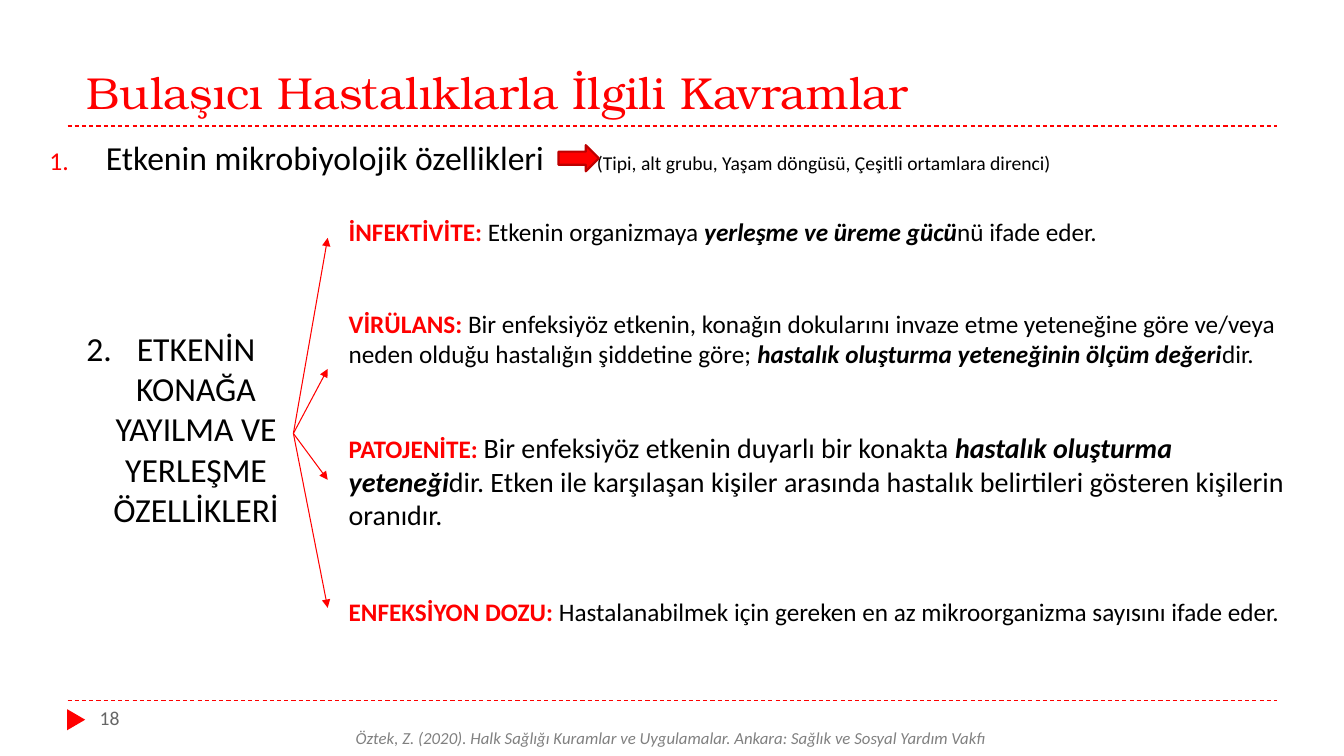
from dataclasses import dataclass

from lxml import etree
from pptx import Presentation
from pptx.dml.color import RGBColor
from pptx.enum.dml import MSO_LINE
from pptx.enum.shapes import MSO_CONNECTOR, MSO_SHAPE
from pptx.enum.text import MSO_ANCHOR, MSO_AUTO_SIZE, PP_ALIGN
from pptx.oxml.ns import qn
from pptx.shapes.autoshape import Shape
from pptx.shapes.connector import Connector
from pptx.slide import Slide
from pptx.text.text import _Paragraph
from pptx.util import Inches, Pt

LEFT, CENTER, JUSTIFY = PP_ALIGN.LEFT, PP_ALIGN.CENTER, PP_ALIGN.JUSTIFY
TOP, BOTTOM = MSO_ANCHOR.TOP, MSO_ANCHOR.BOTTOM
NO_FIT = MSO_AUTO_SIZE.NONE
STRAIGHT = MSO_CONNECTOR.STRAIGHT
ARROW, WEDGE = MSO_SHAPE.RIGHT_ARROW, MSO_SHAPE.ISOSCELES_TRIANGLE
DASH = MSO_LINE.DASH


@dataclass(frozen=True)
class Theme:
    red: str = "FF0000"
    edge: str = "BD0000"
    ink: str = "000000"
    gray: str = "808080"
    dim: str = "666666"
    head: str = "TeX Gyre Bonum"
    font: str = "Calibri"
    title: int = 32
    large: int = 24
    mid: int = 20
    base: int = 18
    small: int = 14
    note: int = 12


THEME = Theme()


@dataclass(frozen=True)
class Box:
    left: float
    top: float
    width: float
    height: float


@dataclass(frozen=True)
class Run:
    text: str
    size: int = THEME.base
    color: str = THEME.ink
    bold: bool = False
    italic: bool = False
    font: str = THEME.font


@dataclass(frozen=True)
class Term:
    name: str
    words: tuple[str, ...]
    gap: int
    tip: float
    size: int = THEME.base


TERMS = (
    Term("İNFEKTİVİTE: ",
         ("Etkenin organizmaya ", "yerleşme ve üreme gücü", "nü ifade eder."),
         0, 2.36),
    Term("VİRÜLANS: ",
         ("Bir enfeksiyöz etkenin, konağın dokularını invaze etme yeteneğine göre "
          "ve/veya neden olduğu hastalığın şiddetine göre; ",
          "hastalık oluşturma yeteneğinin ölçüm değeri", "dir."),
         44, 3.66),
    Term("PATOJENİTE: ",
         ("Bir enfeksiyöz etkenin duyarlı bir konakta ",
          "hastalık oluşturma yeteneği",
          "dir. Etken ile karşılaşan kişiler arasında hastalık belirtileri "
          "gösteren kişilerin oranıdır."),
         44, 4.76, THEME.mid),
    Term("ENFEKSİYON DOZU: ",
         ("Hastalanabilmek için gereken en az mikroorganizma sayısını ifade eder.",),
         46, 6.03),
)


def put(item: object, values: dict[str, object]) -> None:
    for name, value in values.items():
        setattr(item, name, value)


def place(shape: Shape, box: Box, anchor: MSO_ANCHOR = TOP) -> Shape:
    put(shape, {"left": Inches(box.left), "top": Inches(box.top),
                "width": Inches(box.width), "height": Inches(box.height)})
    put(shape.text_frame, {"word_wrap": True, "auto_size": NO_FIT,
                           "vertical_anchor": anchor})
    return shape


def write(para: _Paragraph, runs: list[Run], align: PP_ALIGN = LEFT,
          gap: int = 0) -> None:
    put(para, {"alignment": align, "space_before": Pt(gap)})
    for item in runs:
        run = para.add_run()
        run.text = item.text
        put(run.font, {"name": item.font, "size": Pt(item.size),
                       "bold": item.bold, "italic": item.italic})
        run.font.color.rgb = RGBColor.from_string(item.color)


def text(slide: Slide, box: Box, run: Run, align: PP_ALIGN = LEFT) -> Shape:
    shape = place(slide.shapes.add_textbox(0, 0, 0, 0), box)
    write(shape.text_frame.paragraphs[0], [run], align)
    return shape


def number(para: _Paragraph, start: int, indent: float, color: str,
           scale: int, tab: float = 0) -> None:
    props = para._p.get_or_add_pPr()
    props.set("marL", str(Inches(indent)))
    props.set("indent", str(-Inches(indent)))
    tint = etree.SubElement(props, qn("a:buClr"))
    etree.SubElement(tint, qn("a:srgbClr"), val=color)
    etree.SubElement(props, qn("a:buSzPct"), val=str(scale * 1000))
    etree.SubElement(props, qn("a:buFont"), typeface=THEME.font)
    etree.SubElement(props, qn("a:buAutoNum"), type="arabicPeriod",
                     startAt=str(start))
    if tab:
        stops = etree.SubElement(props, qn("a:tabLst"))
        etree.SubElement(stops, qn("a:tab"), pos=str(Inches(tab)), algn="l")


def link(slide: Slide, start: tuple[float, float],
         end: tuple[float, float]) -> Connector:
    line = slide.shapes.add_connector(
        STRAIGHT, *(Inches(v) for v in (*start, *end)))
    line.line.color.rgb = RGBColor.from_string(THEME.red)
    line.line.width = Pt(0.75)
    etree.SubElement(line._element.spPr, qn("a:effectLst"))
    return line


def solid(slide: Slide, kind: MSO_SHAPE, box: Box) -> Shape:
    shape = place(slide.shapes.add_shape(kind, 0, 0, 0, 0), box)
    shape.shadow.inherit = False
    shape.fill.solid()
    shape.fill.fore_color.rgb = RGBColor.from_string(THEME.red)
    shape.line.fill.background()
    return shape


def main() -> None:
    deck = Presentation()
    put(deck, {"slide_width": Inches(13.33), "slide_height": Inches(7.5)})
    slide = deck.slides.add_slide(deck.slide_layouts[1])

    for y in (6.95, 1.25):
        link(slide, (0.67, y), (12.67, y)).line.dash_style = DASH
    solid(slide, WEDGE, Box(0.65, 7.05, 0.21, 0.18)).rotation = 90

    title = place(slide.shapes.title, Box(0.76, 0, 11.33, 1.23), BOTTOM)
    write(title.text_frame.paragraphs[0],
          [Run("Bulaşıcı Hastalıklarla İlgili Kavramlar", THEME.title,
               THEME.red, font=THEME.head)])

    body = place(slide.placeholders[1], Box(0.39, 1.31, 12.33, 0.98))
    first = body.text_frame.paragraphs[0]
    write(first, [Run("Etkenin mikrobiyolojik özellikleri\t", THEME.large),
                  Run("(Tipi, alt grubu, Yaşam döngüsü, Çeşitli ortamlara direnci)",
                      THEME.small)], JUSTIFY, 6)
    number(first, 1, 0.56, THEME.red, 76, 5.43)

    text(slide, Box(3.43, 7.17, 6.47, 0.31),
         Run("Öztek, Z. (2020). Halk Sağlığı Kuramlar ve Uygulamalar. "
             "Ankara: Sağlık ve Sosyal Yardım Vakfı",
             THEME.note, THEME.gray, italic=True))

    terms = place(slide.shapes.add_textbox(0, 0, 0, 0), Box(3.36, 1.8, 9.53, 5.08))
    frame = terms.text_frame
    frame.margin_top = Inches(0.35)
    for i, term in enumerate(TERMS):
        para = frame.add_paragraph() if i else frame.paragraphs[0]
        runs = [Run(words, term.size, bold=j == 1, italic=j == 1)
                for j, words in enumerate(term.words)]
        write(para, [Run(term.name, color=THEME.red, bold=True), *runs],
              gap=term.gap)

    cause = text(slide, Box(0.48, 3.2, 2.43, 2.2),
                 Run("ETKENİN KONAĞA YAYILMA VE YERLEŞME ÖZELLİKLERİ",
                     THEME.large), CENTER)
    number(cause.text_frame.paragraphs[0], 2, 0.5, THEME.ink, 100)

    arrow = solid(slide, ARROW, Box(5.54, 1.44, 0.4, 0.26))
    arrow.line.color.rgb = RGBColor.from_string(THEME.edge)
    arrow.line.width = Pt(1.5)

    for term in TERMS:
        line = link(slide, (2.91, 4.3), (3.25, term.tip))
        line.begin_connect(cause, 3)
        etree.SubElement(line.line._get_or_add_ln(), qn("a:tailEnd"),
                         type="triangle")

    text(slide, Box(0.89, 6.95, 2.89, 0.4), Run("18", THEME.small, THEME.dim))
    deck.save("out.pptx")


if __name__ == "__main__":
    main()
